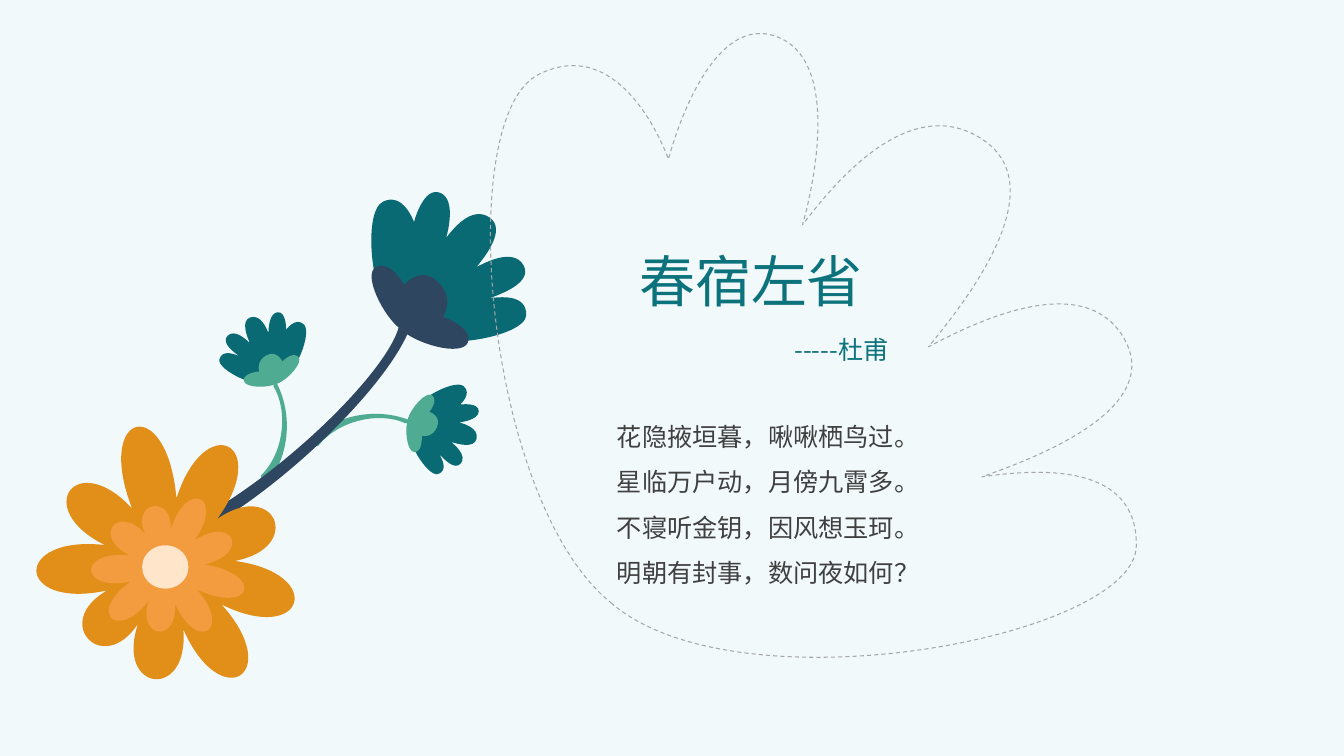
from math import cos, radians, sin

from lxml.etree import SubElement
from pptx import Presentation
from pptx.dml.color import RGBColor
from pptx.enum.dml import MSO_LINE
from pptx.enum.shapes import MSO_SHAPE
from pptx.enum.text import MSO_AUTO_SIZE
from pptx.oxml.ns import qn
from pptx.util import Inches, Pt

FONT = "Noto Sans CJK SC"
PALE = RGBColor(0xF1, 0xF9, 0xFB)
TEAL = RGBColor(0x0A, 0x6A, 0x74)
TITLE_TEAL = RGBColor(0x0C, 0x72, 0x7C)
GREEN = RGBColor(0x4F, 0xAC, 0x92)
NAVY = RGBColor(0x2E, 0x46, 0x5F)
OCHRE = RGBColor(0xE2, 0x8F, 0x1A)
ORANGE = RGBColor(0xF2, 0x9B, 0x3F)
CREAM = RGBColor(0xFF, 0xE5, 0xC9)
GREY = RGBColor(0xA6, 0xA6, 0xA6)
DARK = RGBColor(0x40, 0x40, 0x40)

# Text
TITLE = ["春宿左省"]
POET = ["-----杜甫"]
VERSES = ["花隐掖垣暮，啾啾栖鸟过。",
          "星临万户动，月傍九霄多。\n不寝听金钥，因风想玉珂。",
          "明朝有封事，数问夜如何？"]

# Points are complex numbers, x + y j, in inches; y runs down.
# One side-view bloom, drawn from its base at 0, serves the frame and all three buds.
# Lobes are (tip, handle along the tip, how far the notch handles reach to the tip).
BLOOM = {"lobes": [(5.21 - 0.56j, -0.02 + 0.9j, 0.25), (5.09 - 2.62j, 0.41 + 0.72j, 0.25),
                   (3.68 - 4.6j, 0.75 + 0.49j, 0.25), (1.66 - 5.61j, 0.71 + 0.29j, 0),
                   (-0.72 - 5.24j, 0.85 - 0.43j, 0)],
         "notches": [3.68 - 1.25j, 3.15 - 2.54j, 1.9 - 3.75j, 0.57 - 4.4j],
         "base_handles": (1.26 + 1.09j, -1.25 - 1.01j)}
CUP = {"lobes": [(2.79 + 0.58j, -0.25 + 0.6j, 0), (1.56 - 1.93j, 0.72 + 0.7j, 0),
                 (-0.99 - 2.55j, 0.6 - 0.29j, 0)],
       "notches": [1.77 - 0.49j, 0.16 - 1.81j],
       "base_handles": (0.58 + 0.62j, -0.66 - 0.45j)}

# Stems: one edge going up to the bloom, the other coming back
BUD_STEM = ([-1.19 + 8.55j, -2.63 + 6.01j, -2.05 + 2j, 0.49 - 0.33j],
            [0.29 + 0.38j, -1.43 + 1.98j, -2.05 + 5.45j, -0.69 + 7.77j])
MAIN_STEM = ([1.7 + 5.28j, 2.66 + 4.86j, 3.85 + 3.7j, 3.96 + 3.23j],
             [4.09 + 3.17j, 3.97 + 3.73j, 2.67 + 5.03j, 1.63 + 5.46j])

# Where the bloom stands
FRAME = {"base": 6.06 + 5.98j, "scale": 1}
RIGHT_BUD = {"base": 4.05 + 4.15j, "scale": 0.12, "turn": 67.8}
LEFT_BUD = {"base": 2.76 + 3.8j, "scale": 0.12, "turn": -164.2, "mirrored": True}
TOP_BUD = {"base": 3.97 + 3.26j, "scale": 0.24}

# Open flower: rings of equally spaced petals, each with its own length
RINGS = [
    {"center": 1.67 + 5.6j, "radius": 0.66, "spread": 0.75, "color": OCHRE,
     "lengths": [0.69, 0.92, 1.04, 0.8, 0.92, 0.62, 0.7, 0.92, 0.91]},
    {"center": 1.65 + 5.62j, "radius": 0.38, "spread": 0.42, "color": ORANGE,
     "lengths": [0.46, 0.52, 0.34, 0.41, 0.52, 0.52, 0.39, 0.53, 0.6]}]
RING_START = -3
HEART = (1.41, 5.41, 0.46, 0.43)


# Outlines: a start point, then two handles and an end for each curve
def direction(degrees):
    return complex(cos(radians(degrees)), sin(radians(degrees)))


def lobed_outline(lobes, notches, base_handles):
    """From the base over each rounded tip, dipping to a notch between tips."""
    leave, arrive = base_handles
    outline = [0j]
    for index, (tip, lean, reach) in enumerate(lobes):
        before, after = tip + lean, tip - lean
        start = outline[-1]
        rise = start + reach * (before - start) if index else leave
        outline += [rise, before, tip]
        if index < len(notches):
            notch = notches[index]
            outline += [after, notch + reach * (after - notch), notch]
    return outline + [after, arrive, 0j]


def stem_outline(up, back):
    """Two curved edges joined by straight ends."""
    return up + [up[-1], back[0]] + back + [back[-1], up[0], up[0]]


def ring_outline(center, radius, spread, lengths):
    """One curve per petal, from notch to notch around the center."""
    step = 360 / len(lengths)
    outline = [center + radius * direction(RING_START)]
    for index, length in enumerate(lengths):
        notch = center + radius * direction(RING_START - (index + 1) * step)
        axis = direction(RING_START - (index + 0.5) * step)
        crown = (outline[-1] + notch) / 2 + length * axis
        side = axis * 1j * spread / 2
        outline += [crown + side, crown - side, notch]
    return outline


def place(outline, base, scale, turn=0, mirrored=False):
    return [base + scale * direction(turn) * (point.conjugate() if mirrored else point)
            for point in outline]


# Drawing
def paint(shape, fill=None, line=None):
    shape.shadow.inherit = False
    if fill is None:
        shape.fill.background()
    else:
        shape.fill.solid()
        shape.fill.fore_color.rgb = fill
    if line is None:
        shape.line.fill.background()
    else:
        shape.line.color.rgb = line
        shape.line.width = Pt(0.75)
        shape.line.dash_style = MSO_LINE.DASH


def add_curve(group, outline, **colors):
    points = [(round(point.real * 1000), round(point.imag * 1000)) for point in outline]
    builder = group.shapes.build_freeform(*points[0], scale=Inches(1) / 1000)
    builder.add_line_segments(points[1:], close=True)
    shape = builder.convert_to_shape()
    # Every three straight segments become the points of one curve
    segments = list(shape.element.iter(qn("a:lnTo")))[:len(points) - 1]
    for start in range(0, len(segments), 3):
        curve = SubElement(segments[start].getparent(), qn("a:cubicBezTo"))
        segments[start].addprevious(curve)
        for segment in segments[start:start + 3]:
            curve.append(segment[0])
            segment.getparent().remove(segment)
    paint(shape, **colors)


def add_text(group, lines, at, size, color, spacing=1.0, wrap=True):
    box = group.shapes.add_textbox(*map(Inches, at))
    frame = box.text_frame
    frame.word_wrap = wrap
    frame.auto_size = MSO_AUTO_SIZE.SHAPE_TO_FIT_TEXT
    for index, line in enumerate(lines):
        para = frame.add_paragraph() if index else frame.paragraphs[0]
        para.text = line
        para.line_spacing = spacing
        for span in para.runs:
            span.font.name = FONT
            span.font.size = Pt(size)
            span.font.color.rgb = color
            SubElement(span.font._element, qn("a:ea")).set("typeface", FONT)


def main():
    deck = Presentation()
    deck.slide_width, deck.slide_height = Inches(13.33), Inches(7.5)
    page = deck.slides.add_slide(deck.slide_layouts[6])
    page.background.fill.solid()
    page.background.fill.fore_color.rgb = PALE
    bloom, cup = lobed_outline(**BLOOM), lobed_outline(**CUP)

    # Buds on their stems
    bouquet = page.shapes.add_group_shape()
    bud_stem = stem_outline(*BUD_STEM)
    for spot, cup_color in [(RIGHT_BUD, GREEN), (LEFT_BUD, GREEN), (TOP_BUD, NAVY)]:
        add_curve(bouquet, place(bloom, **spot), fill=TEAL)
        add_curve(bouquet, place(cup, **spot), fill=cup_color)
        if spot is not TOP_BUD:
            add_curve(bouquet, place(bud_stem, **spot), fill=cup_color)
    add_curve(bouquet, stem_outline(*MAIN_STEM), fill=NAVY)

    # Open flower
    for ring in RINGS:
        shape_of_ring = {name: value for name, value in ring.items() if name != "color"}
        add_curve(bouquet, ring_outline(**shape_of_ring), fill=ring["color"])
    paint(bouquet.shapes.add_shape(MSO_SHAPE.OVAL, *map(Inches, HEART)), fill=CREAM)

    # Poem inside its dashed frame
    poem = page.shapes.add_group_shape()
    add_curve(poem, place(bloom, **FRAME), line=GREY)
    add_text(poem, VERSES, (6.02, 3.98, 3.3, 1.92), size=18, color=DARK, spacing=1.5)
    add_text(poem, TITLE, (6.24, 2.4, 2.81, 0.77), size=40, color=TITLE_TEAL)
    add_text(poem, POET, (7.78, 3.27, 1.27, 0.4), size=18, color=TITLE_TEAL, wrap=False)

    deck.save("out.pptx")


if __name__ == "__main__":
    main()
